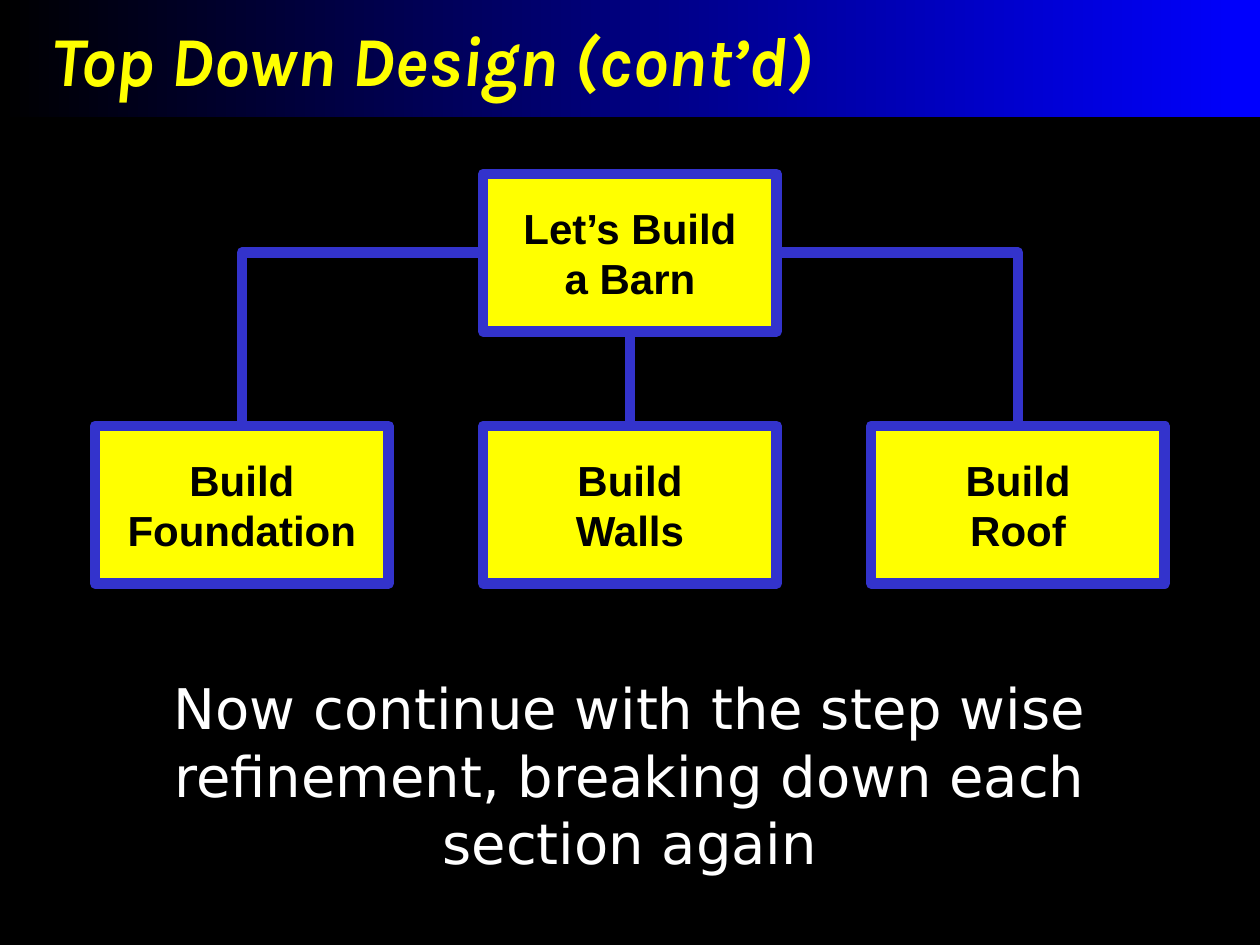
from lxml import etree
from pptx import Presentation, util as u
from pptx.dml.color import RGBColor
from pptx.enum import shapes, text
from pptx.oxml.ns import qn

BLACK = RGBColor(0x00, 0x00, 0x00)
BLUE = RGBColor(0x00, 0x00, 0xFF)
INDIGO = RGBColor(0x33, 0x33, 0xCC)
YELLOW = RGBColor(0xFF, 0xFF, 0x00)
WHITE = RGBColor(0xFF, 0xFF, 0xFF)

TOP, LEFT, BOTTOM, RIGHT = range(4)  # connection sites of a rectangle

presentation = Presentation()
presentation.slide_width, presentation.slide_height = u.Inches(10), u.Inches(7.5)
width, height = presentation.slide_width, presentation.slide_height
slide = presentation.slides.add_slide(presentation.slide_layouts[6])
slide.background.fill.solid()
slide.background.fill.fore_color.rgb = BLACK

# Grid of three columns, centred on the slide
BOX_WIDTH, BOX_HEIGHT = u.Inches(2.33), u.Inches(1.25)
COLUMN_STEP = u.Inches(3.08)
column_lefts = [(width - BOX_WIDTH) // 2 + offset * COLUMN_STEP for offset in (-1, 0, 1)]
row_tops = [u.Inches(1.38), u.Inches(3.38)]


def write(shape, lines, size, font_name, color, alignment):
    for index, line in enumerate(lines):
        frame = shape.text_frame
        paragraph = frame.add_paragraph() if index else frame.paragraphs[0]
        paragraph.text = line
        paragraph.alignment = alignment
        paragraph.font.size = u.Pt(size)
        paragraph.font.name = font_name
        paragraph.font.color.rgb = color


def add_box(column, row, lines):
    box = slide.shapes.add_shape(
        shapes.MSO_SHAPE.RECTANGLE, column_lefts[column], row_tops[row], BOX_WIDTH, BOX_HEIGHT)
    box.shadow.inherit = False
    box.fill.solid()
    box.fill.fore_color.rgb = YELLOW
    box.line.color.rgb = INDIGO
    box.line.width = u.Pt(6)
    box.text_frame.word_wrap = False
    box.text_frame.vertical_anchor = text.MSO_ANCHOR.MIDDLE
    write(box, lines, 24, "Arial", BLACK, text.PP_ALIGN.CENTER)
    for paragraph in box.text_frame.paragraphs:
        paragraph.font.bold = True
    return box


# Title band
title = slide.shapes.add_shape(shapes.MSO_SHAPE.RECTANGLE, 0, 0, width, u.Inches(0.93))
title.shadow.inherit = False
title.line.fill.background()
title.fill.gradient()
title.fill.gradient_angle = 0
for stop, color, position in zip(title.fill.gradient_stops, (BLACK, BLUE), (0, 1)):
    stop.color.rgb = color
    stop.position = position
frame = title.text_frame
frame.word_wrap = True
frame.vertical_anchor = text.MSO_ANCHOR.TOP
frame.margin_left, frame.margin_right = u.Inches(0.41), u.Inches(0.14)
frame.margin_top = frame.margin_bottom = u.Inches(0.13)
write(title, ["Top Down Design (cont’d)"], 40, "Karla", YELLOW, text.PP_ALIGN.LEFT)
frame.paragraphs[0].font.bold = True
frame.paragraphs[0].font.italic = True

# Boxes of the chart
root = add_box(1, 0, ["Let’s Build", "a Barn"])
steps = [add_box(column, 1, ["Build", part])
         for column, part in enumerate(("Foundation", "Walls", "Roof"))]

# Lines from the root to each step
for step, side in zip(steps, (LEFT, BOTTOM, RIGHT)):
    straight = side == BOTTOM
    kind = shapes.MSO_CONNECTOR.STRAIGHT if straight else shapes.MSO_CONNECTOR.ELBOW
    connector = slide.shapes.add_connector(kind, 0, 0, 0, 0)
    connector.begin_connect(root, side)
    connector.end_connect(step, TOP)
    connector.line.color.rgb = INDIGO
    connector.line.width = u.Pt(6)
    properties = connector._element.spPr
    if not straight:  # a single corner
        properties.find(qn("a:prstGeom")).set("prst", "bentConnector2")
    etree.SubElement(properties, qn("a:effectLst"))

# Closing remark
remark_width = u.Inches(7.92)
remark = slide.shapes.add_textbox(
    (width - remark_width) // 2, u.Inches(5.3), remark_width, u.Inches(1.7))
remark.text_frame.word_wrap = True
write(remark, ["Now continue with the step wise refinement, breaking down each section again"],
      32, "DejaVu Sans", WHITE, text.PP_ALIGN.CENTER)

presentation.save("out.pptx")
